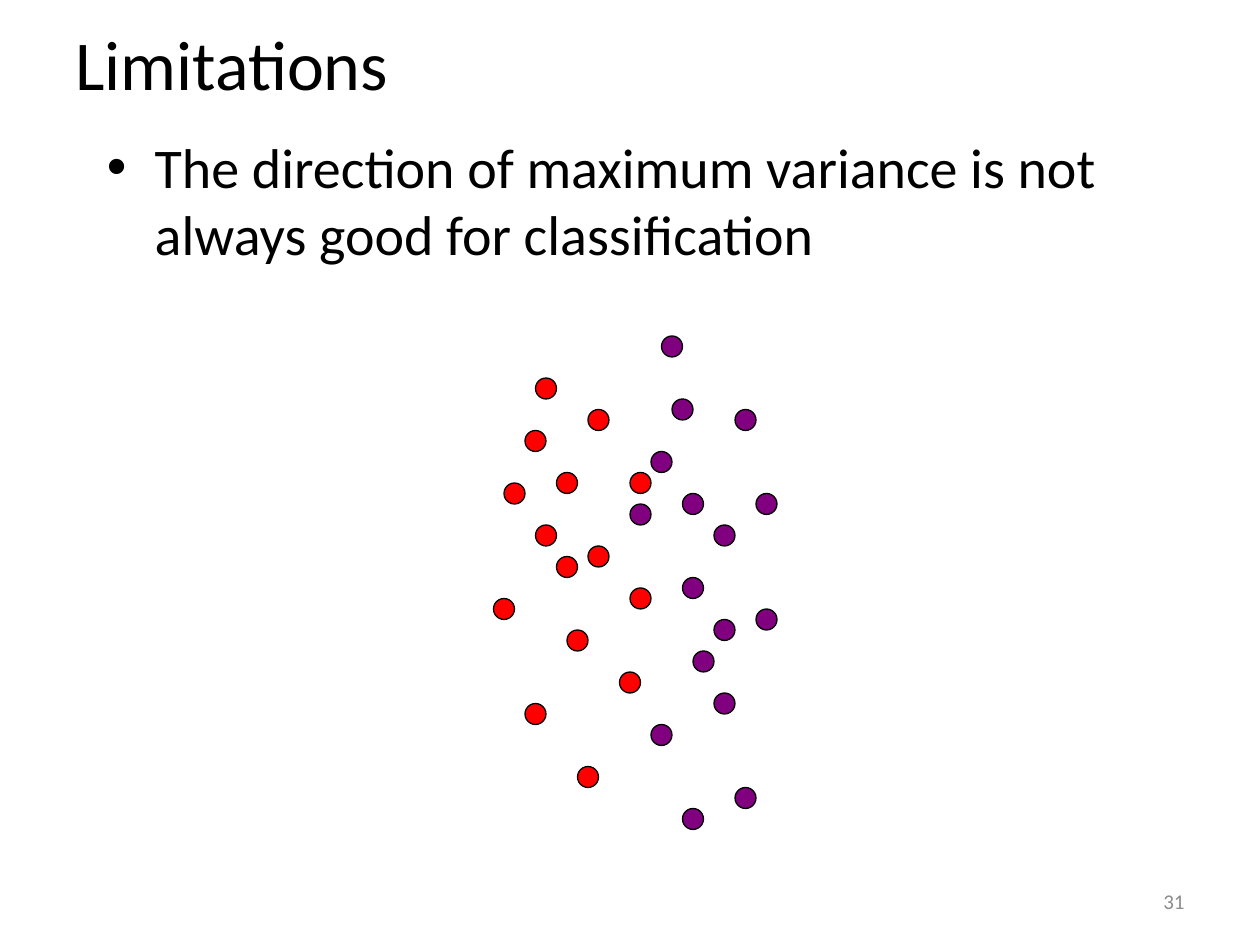
"""Builds a slide on the limits of maximum variance for classification."""
from lxml import etree
from pptx import Presentation
from pptx import util as u
from pptx.dml.color import RGBColor
from pptx.enum import shapes, text
from pptx.oxml.ns import qn

FONT = "Calibri"
BLACK = "000000"
CELLS_PER_INCH = 12
DOT_CELLS = 2
BULLET_INDENT = u.Inches(0.38)

TITLE = "Limitations"
STATEMENT = "The direction of maximum variance is not always good for classification"
SLIDE_NUMBER = "31"

CLASSES = {
    "FF0000": [
        (51, 36), (53, 45), (50, 41), (48, 46), (51, 50),
        (54, 60), (56, 52), (47, 57), (53, 53), (50, 67),
        (56, 39), (60, 45), (60, 56), (59, 64), (55, 73),
    ],
    "800080": [
        (63, 32), (65, 47), (62, 43), (60, 48), (68, 50), (66, 62),
        (70, 39), (68, 59), (65, 55), (62, 69), (64, 38), (72, 47),
        (72, 58), (68, 66), (70, 75), (65, 77),
    ],
}


def color(value):
    return RGBColor.from_string(value)


def add_text(slide, words, box, size, ink=BLACK,
             anchor=text.MSO_ANCHOR.MIDDLE, align=text.PP_ALIGN.LEFT):
    shape = slide.shapes.add_textbox(*(u.Inches(length) for length in box))
    frame = shape.text_frame
    frame.word_wrap = True
    frame.vertical_anchor = anchor
    paragraph = frame.paragraphs[0]
    paragraph.alignment = align
    run = paragraph.add_run()
    run.text = words
    run.font.name = FONT
    run.font.size = u.Pt(size)
    run.font.color.rgb = color(ink)
    return paragraph


def add_bullet(paragraph):
    properties = paragraph._p.get_or_add_pPr()
    properties.set("marL", str(BULLET_INDENT))
    properties.set("indent", str(-BULLET_INDENT))
    etree.SubElement(properties, qn("a:buFont"), typeface="Arial")
    etree.SubElement(properties, qn("a:buChar"), char="•")


def add_dot(slide, column, row, fill):
    cells = (column, row, DOT_CELLS, DOT_CELLS)
    dot = slide.shapes.add_shape(
        shapes.MSO_SHAPE.OVAL, *(u.Inches(cell / CELLS_PER_INCH) for cell in cells))
    dot.shadow.inherit = False
    dot.fill.solid()
    dot.fill.fore_color.rgb = color(fill)
    dot.line.color.rgb = color(BLACK)
    dot.line.width = u.Pt(0.75)


def main():
    presentation = Presentation()
    presentation.slide_width = u.Inches(10)
    presentation.slide_height = u.Inches(7.5)
    slide = presentation.slides.add_slide(presentation.slide_layouts[6])

    add_text(slide, TITLE, (0.5, 0, 9, 1), 40)
    add_bullet(add_text(slide, STATEMENT, (0.75, 1, 8.5, 1.17), 32,
                        anchor=text.MSO_ANCHOR.TOP))
    for fill, points in CLASSES.items():
        for column, row in points:
            add_dot(slide, column, row, fill)
    add_text(slide, SLIDE_NUMBER, (7.17, 6.95, 2.33, 0.4), 12, "8C8C8C",
             align=text.PP_ALIGN.RIGHT)

    presentation.save("out.pptx")


if __name__ == "__main__":
    main()
